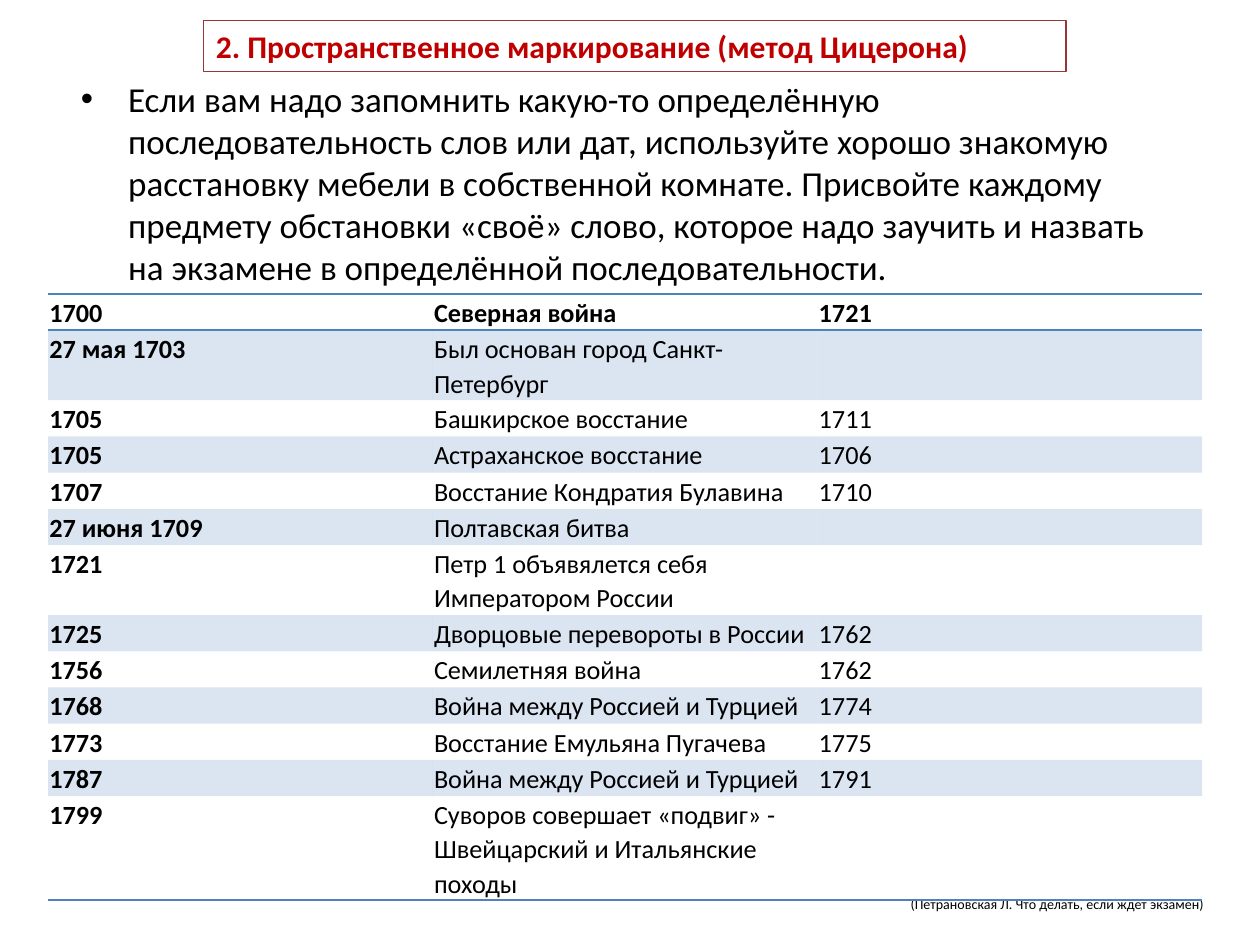
from lxml.etree import SubElement
from pptx import Presentation
from pptx.dml.color import RGBColor
from pptx.enum.text import MSO_ANCHOR, MSO_AUTO_SIZE, PP_ALIGN
from pptx.oxml.ns import qn
from pptx.util import Pt

COLOURS = {"text": "000000", "heading": "C00000", "frame": "953735", "accent": "4F81BD"}
NO_GRID_STYLE = "{2D5ABB26-0587-4C30-8999-92F81FD0307C}"
LINE_HEIGHT, ROW_PADDING = 19.3, 1.4
HARD_SPACE = chr(160)

HEADING = "2. Пространственное маркирование (метод Цицерона)"
ADVICE = (
    "Если вам надо запомнить какую-то определённую последовательность слов или дат, "
    f"используйте хорошо знакомую расстановку мебели в{HARD_SPACE}собственной комнате. "
    "Присвойте каждому предмету обстановки «своё» слово, которое надо заучить "
    f"и{HARD_SPACE}назвать на{HARD_SPACE}экзамене в{HARD_SPACE}определённой последовательности."
)
CREDIT = "(Петрановская Л. Что делать, если ждет экзамен)"

# start date, event, end date, lines of text in the row
EVENTS = [
    ("1700", "Северная война", "1721", 1),
    ("27 мая 1703", "Был основан город Санкт-Петербург", "", 2),
    ("1705", "Башкирское восстание", "1711", 1),
    ("1705", "Астраханское восстание", "1706", 1),
    ("1707", "Восстание Кондратия Булавина", "1710", 1),
    ("27 июня 1709", "Полтавская битва", "", 1),
    ("1721", "Петр 1 объявялется себя Императором России", "", 2),
    ("1725", "Дворцовые перевороты в России", "1762", 1),
    ("1756", "Семилетняя война", "1762", 1),
    ("1768", "Война между Россией и Турцией", "1774", 1),
    ("1773", "Восстание Емульяна Пугачева", "1775", 1),
    ("1787", "Война между Россией и Турцией", "1791", 1),
    ("1799", "Суворов совершает «подвиг» - Швейцарский и Итальянские походы", "", 3),
]


class SlideBuilder:
    """Adds elements in one common style to the current slide."""

    def __init__(self, page, font="Calibri"):
        self.page = page
        self.font = font

    def colour(self, name):
        return RGBColor.from_string(COLOURS[name])

    def add_span(self, para, text, size, bold=False, colour="text"):
        span = para.add_run()
        span.text = text
        span.font.name = self.font
        span.font.size = Pt(size)
        span.font.bold = bold
        span.font.color.rgb = self.colour(colour)

    def place(self, box, left, top, width, height):
        box.left, box.top = Pt(left), Pt(top)
        box.width, box.height = Pt(width), Pt(height)

    def heading(self, text, *area):
        box = self.page.shapes.title
        self.place(box, *area)
        box.line.color.rgb = self.colour("frame")
        box.line.width = Pt(0.75)
        box.text_frame.auto_size = MSO_AUTO_SIZE.NONE
        box.text_frame.vertical_anchor = MSO_ANCHOR.TOP
        para = box.text_frame.paragraphs[0]
        para.alignment = PP_ALIGN.LEFT
        self.add_span(para, text, 18, True, "heading")

    def body(self, text, *area):
        box = self.page.placeholders[1]
        self.place(box, *area)
        box.text_frame.auto_size = MSO_AUTO_SIZE.NONE
        self.add_span(box.text_frame.paragraphs[0], text, 20)

    def caption(self, text, *area):
        box = self.page.shapes.add_textbox(*map(Pt, area))
        box.text_frame.word_wrap = True
        box.text_frame.auto_size = MSO_AUTO_SIZE.SHAPE_TO_FIT_TEXT
        self.add_span(box.text_frame.paragraphs[0], text, 8)

    def border(self, cell, side):
        line = SubElement(cell._tc.get_or_add_tcPr(), qn(f"a:{side}"), w=str(Pt(1)))
        SubElement(SubElement(line, qn("a:solidFill")), qn("a:srgbClr"), val=COLOURS["accent"])

    def shade(self, cell, banded):
        if not banded:
            cell.fill.background()
            return
        cell.fill.solid()
        cell.fill.fore_color.rgb = self.colour("accent")
        colour_node = cell._tc.tcPr.find(".//" + qn("a:srgbClr"))
        SubElement(colour_node, qn("a:alpha"), val="20000")

    def fill_cell(self, cell, text, bold, size=15):
        cell.margin_left = cell.margin_right = Pt(0.7)
        cell.margin_top = cell.margin_bottom = Pt(0.7)
        para = cell.text_frame.paragraphs[0]
        para.line_spacing = 1.07
        if text:
            self.add_span(para, text, size, bold)
        else:
            # keeps an empty cell from stretching its row
            SubElement(para._p, qn("a:endParaRPr"), sz=str(size * 100))

    def timeline(self, events, left, top, width):
        heights = [lines * LINE_HEIGHT + ROW_PADDING for *_, lines in events]
        table = self.page.shapes.add_table(
            len(events), 3, Pt(left), Pt(top), Pt(width), Pt(sum(heights))
        ).table
        table.first_row = table.horz_banding = False
        table._tbl.tblPr.find(qn("a:tableStyleId")).text = NO_GRID_STYLE
        last = len(events) - 1
        for row, (*texts, _) in enumerate(events):
            table.rows[row].height = Pt(heights[row])
            for column, text in enumerate(texts):
                cell = table.cell(row, column)
                self.fill_cell(cell, text, bold=row == 0 or column == 0)
                if row == 0:
                    self.border(cell, "lnT")
                if row in (0, last):
                    self.border(cell, "lnB")
                self.shade(cell, banded=row % 2 == 1)


def main():
    deck = Presentation()
    deck.slide_width, deck.slide_height = Pt(720), Pt(540)
    builder = SlideBuilder(deck.slides.add_slide(deck.slide_layouts[1]))
    builder.body(ADVICE, 39, 40.5, 648, 442)
    builder.caption(CREDIT, 513.2, 508, 190, 17)
    builder.timeline(EVENTS, 27.5, 168, 659.5)
    builder.heading(HEADING, 116.2, 11.6, 493, 29.1)
    deck.save("out.pptx")


if __name__ == "__main__":
    main()
